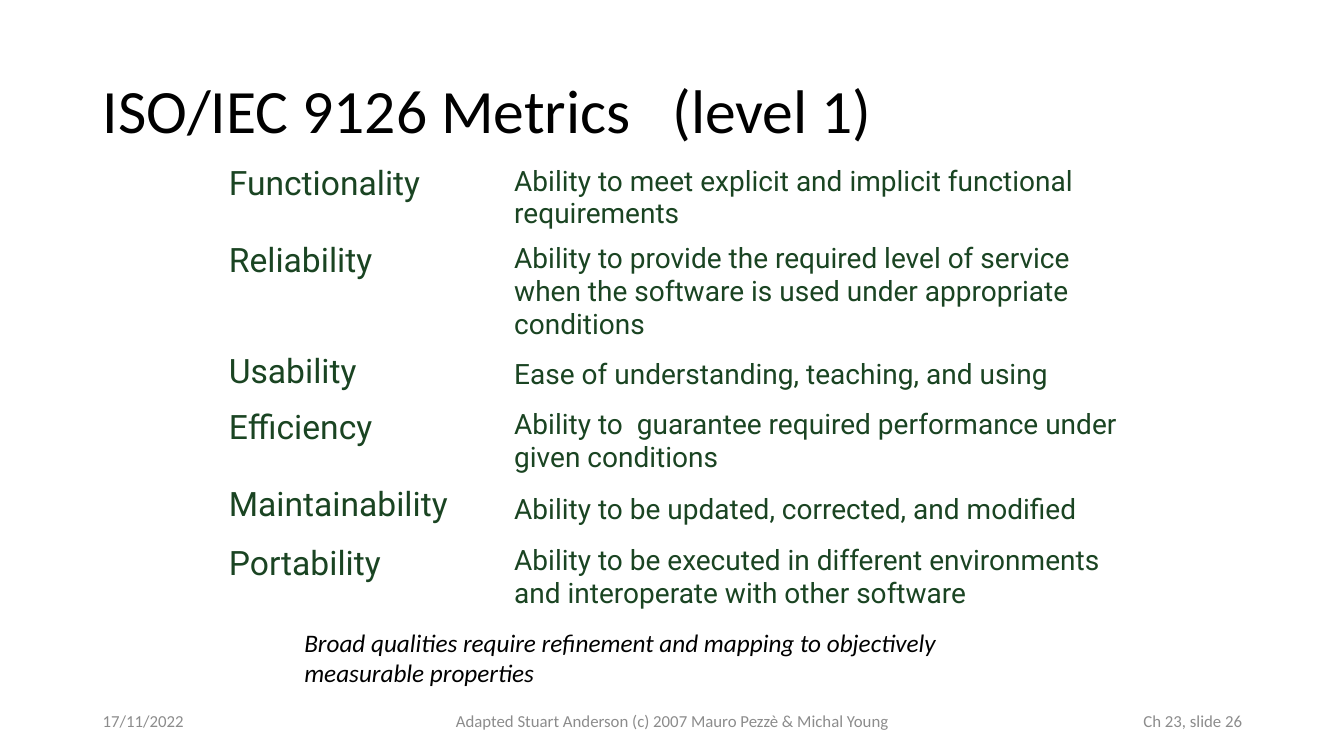
import pptx
import pptx.dml.color
import pptx.enum.text
import pptx.util

BLACK = pptx.dml.color.RGBColor(0x00, 0x00, 0x00)
GREY = pptx.dml.color.RGBColor(0x8C, 0x8C, 0x8C)
GREEN = pptx.dml.color.RGBColor(0x1A, 0x44, 0x22)
ALIGN = pptx.enum.text.PP_ALIGN
ANCHOR = pptx.enum.text.MSO_ANCHOR
PX = 9144

QUALITIES = [
    ("Functionality", "Ability to meet explicit and implicit functional requirements", 75),
    ("Reliability", "Ability to provide the required level of service when the software "
                    "is used under appropriate conditions", 108),
    ("Usability", "Ease of understanding, teaching, and using", 55),
    ("Efficiency", "Ability to  guarantee required performance under given conditions", 75),
    ("Maintainability", "Ability to be updated, corrected, and modified", 58),
    ("Portability", "Ability to be executed in different environments and interoperate "
                    "with other software", 75),
]
FOOTERS = [
    ("17/11/2022", 92, 300, ALIGN.LEFT),
    ("Adapted Stuart Anderson (c) 2007 Mauro Pezzè & Michal Young", 442, 450, ALIGN.CENTER),
    ("Ch 23, slide 26", 942, 300, ALIGN.RIGHT),
]


class MetricsSlide:
    """Holds the fonts and the current slide, and adds text and tables to it."""

    body_font = "Calibri"
    table_font = "Roboto"

    def __init__(self, presentation):
        self.slide = presentation.slides.add_slide(presentation.slide_layouts[6])

    def style(self, paragraph, font_name, size, color, italic=False):
        for run in paragraph.runs:
            run.font.name = font_name
            run.font.size = pptx.util.Pt(size)
            run.font.color.rgb = color
            run.font.italic = italic

    def text(self, text, left, top, width, height, size, color=BLACK, italic=False,
             align=ALIGN.LEFT, anchor=ANCHOR.MIDDLE, line_spacing=None):
        box = self.slide.shapes.add_textbox(left * PX, top * PX, width * PX, height * PX)
        text_frame = box.text_frame
        text_frame.word_wrap = True
        text_frame.vertical_anchor = anchor
        text_frame.text = text
        paragraph = text_frame.paragraphs[0]
        paragraph.alignment = align
        paragraph.line_spacing = line_spacing
        self.style(paragraph, self.body_font, size, color, italic)

    def table(self, rows, left, top, widths):
        height = sum(row_height for _, _, row_height in rows)
        table = self.slide.shapes.add_table(
            len(rows), len(widths), left * PX, top * PX, sum(widths) * PX, height * PX).table
        table.first_row = False
        table.horz_banding = False
        for column, width in zip(table.columns, widths):
            column.width = width * PX
        for row, (quality, meaning, row_height) in zip(table.rows, rows):
            row.height = row_height * PX
            contents = [(quality, 24, ANCHOR.TOP), (meaning, 20, ANCHOR.MIDDLE)]
            for cell, (text, size, anchor) in zip(row.cells, contents):
                cell.fill.background()
                cell.vertical_anchor = anchor
                cell.text_frame.text = text
                self.style(cell.text_frame.paragraphs[0], self.table_font, size, GREEN)


def main():
    presentation = pptx.Presentation()
    presentation.slide_width = 1333 * PX
    presentation.slide_height = 750 * PX
    metrics = MetricsSlide(presentation)
    metrics.text("ISO/IEC 9126 Metrics   (level 1)", 92, 40, 1150, 145, 44, line_spacing=0.9)
    metrics.table(QUALITIES, 217, 158, [283, 633])
    metrics.text("Broad qualities require refinement and mapping to objectively measurable properties",
                 292, 617, 756, 71, 18, italic=True, anchor=ANCHOR.TOP)
    for text, left, width, align in FOOTERS:
        metrics.text(text, left, 695, width, 40, 12, GREY, align=align)
    presentation.save("out.pptx")


if __name__ == "__main__":
    main()
